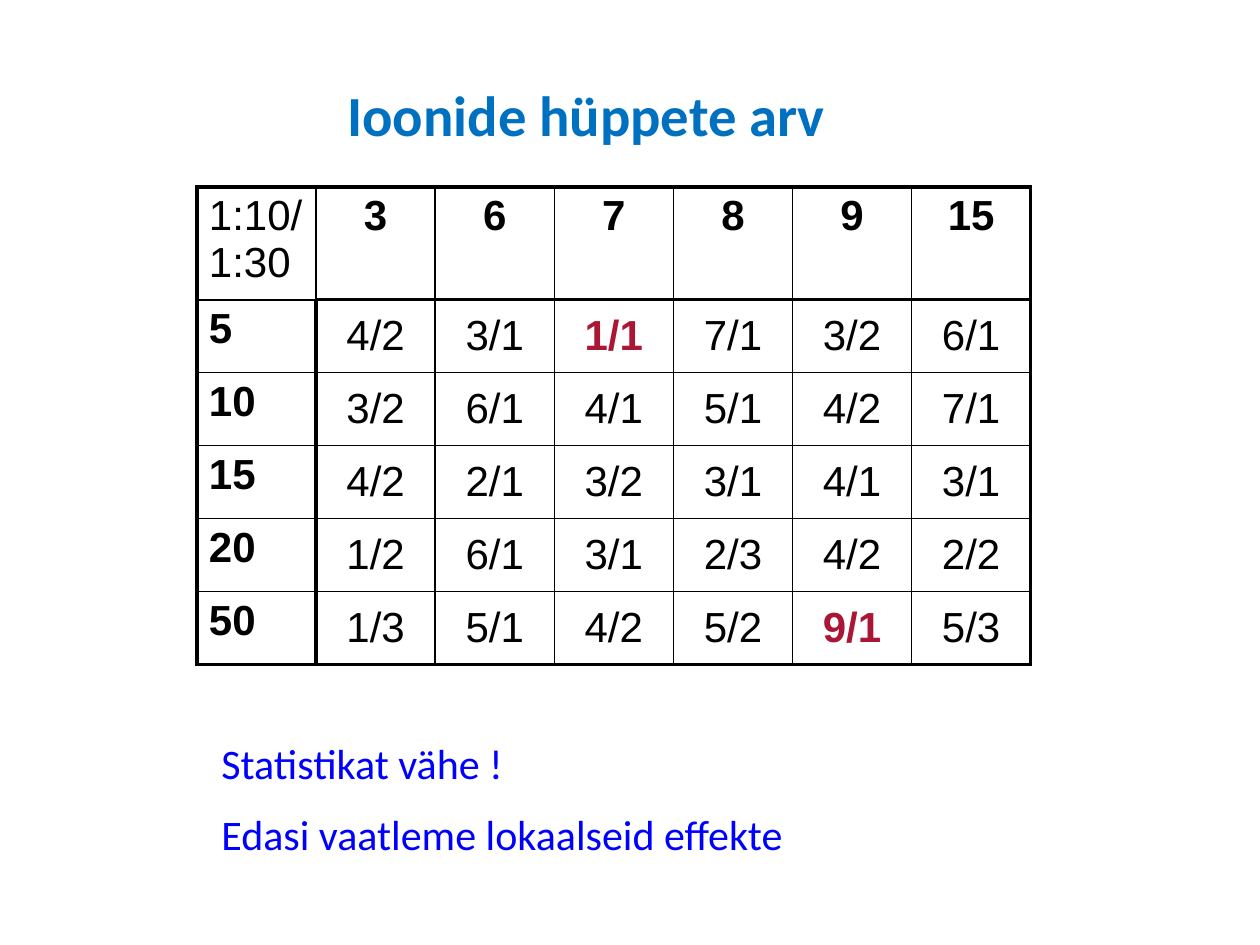
from lxml.etree import SubElement
from pptx import Presentation
from pptx.dml.color import RGBColor
from pptx.enum.text import MSO_ANCHOR as ANCHOR, PP_ALIGN as ALIGN
from pptx.oxml.ns import qn
from pptx.util import Pt

EMU = 914400 / 126
BLACK, RED = "000000", "AA1736"
THICK, THIN = 2.25, 1


def px(n):
    return round(n * EMU)


def add_run(p, text, size, font, color, bold=False):
    r = p.add_run()
    r.text = text
    r.font.size = Pt(size)
    r.font.name = font
    r.font.bold = bold
    r.font.color.rgb = RGBColor.from_string(color)


prs = Presentation()
prs.slide_width, prs.slide_height = px(1260), px(945)
s = prs.slides.add_slide(prs.slide_layouts[6])

tf = s.shapes.add_textbox(px(335), px(88), px(522), px(52)).text_frame
tf.word_wrap = True
tf.vertical_anchor = ANCHOR.MIDDLE
p = tf.paragraphs[0]
p.alignment = ALIGN.JUSTIFY
add_run(p, "Ioonide hüppete arv", 32.4, "Calibri", "0070C0", True)

rows = [
    ["1:10/1:30", "3", "6", "7", "8", "9", "15"],
    ["5", "4/2", "3/1", "1/1", "7/1", "3/2", "6/1"],
    ["10", "3/2", "6/1", "4/1", "5/1", "4/2", "7/1"],
    ["15", "4/2", "2/1", "3/2", "3/1", "4/1", "3/1"],
    ["20", "1/2", "6/1", "3/1", "2/3", "4/2", "2/2"],
    ["50", "1/3", "5/1", "4/2", "5/2", "9/1", "5/3"],
]
extremes = {(1, 3), (5, 5)}
last_row, last_col = len(rows) - 1, len(rows[0]) - 1

frame = s.shapes.add_table(len(rows), len(rows[0]), px(197), px(187), px(834), px(479))
table = frame.table
table.first_row = table.horz_banding = False
for col in table.columns:
    col.width = round(px(834) / len(rows[0]))
for i, row in enumerate(table.rows):
    row.height = px(73 if i else 77)
frame.height = px(479)

for i, row in enumerate(rows):
    for j, text in enumerate(row):
        cell = table.cell(i, j)
        cell.margin_left = cell.margin_right = px(12)
        cell.margin_top = cell.margin_bottom = px(6)
        cell.vertical_anchor = ANCHOR.MIDDLE if i and j else ANCHOR.TOP
        p = cell.text_frame.paragraphs[0]
        p.alignment = ALIGN.CENTER if j else ALIGN.LEFT
        p.space_before = Pt(4.8)
        extreme = (i, j) in extremes
        header = (i == 0) != (j == 0)
        add_run(p, text, 24, "Arial", RED if extreme else BLACK, header or extreme)

        thick_sides = {
            "a:lnL": j == 0 or (j == 1 and i > 0),
            "a:lnR": j == last_col or (j == 0 and i > 0),
            "a:lnT": i == 0 or (i == 1 and j > 0),
            "a:lnB": i == last_row or (i == 0 and j > 0),
        }
        tcPr = cell._tc.get_or_add_tcPr()
        for side, thick in thick_sides.items():
            ln = SubElement(tcPr, qn(side), w=str(Pt(THICK if thick else THIN)))
            fill = SubElement(ln, qn("a:solidFill"))
            SubElement(fill, qn("a:srgbClr"), val=BLACK)
        cell.fill.background()

tf = s.shapes.add_textbox(px(209), px(731), px(588), px(140)).text_frame
tf.word_wrap = True
for i, text in enumerate(["Statistikat vähe !", "Edasi vaatleme lokaalseid effekte"]):
    p = tf.add_paragraph() if i else tf.paragraphs[0]
    p.space_before = Pt(12)
    add_run(p, text, 24, "Calibri", "0000FF")

prs.save("out.pptx")
